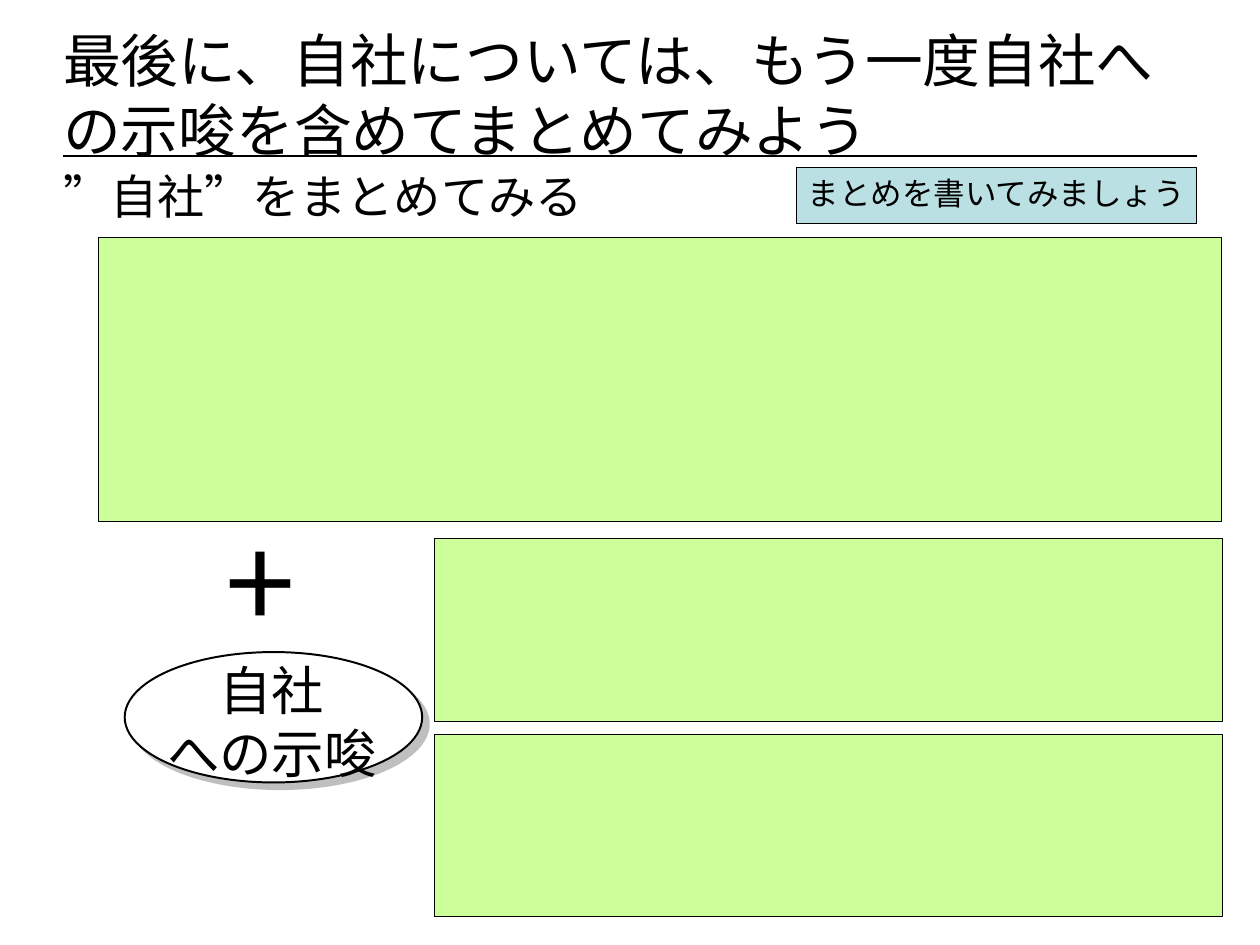
from dataclasses import dataclass
from typing import NamedTuple

from lxml.etree import SubElement
from pptx import Presentation
from pptx.dml.color import RGBColor as Rgb
from pptx.enum.shapes import MSO_CONNECTOR as Link, MSO_SHAPE as Kind
from pptx.enum.text import MSO_ANCHOR as Anchor, PP_ALIGN as Align
from pptx.oxml.ns import qn
from pptx.slide import Slide
from pptx.text.text import TextFrame
from pptx.util import Inches, Pt


@dataclass(frozen=True)
class Theme:
    font: str = "Noto Sans CJK JP"
    ink: str = "000000"
    paper: str = "FFFFFF"
    field: str = "CCFF99"
    tag: str = "BBE0E3"
    shade: str = "BFBFBF"
    title: int = 44
    oval: int = 40
    head: int = 36
    note: int = 24
    plus: int = 96
    lead: float = 1.21
    drop: float = 0.06


class Box(NamedTuple):
    """Left, top, width and height in percent of the slide."""
    x: float
    y: float
    w: float
    h: float


class Panel(NamedTuple):
    box: Box
    kind: Kind
    fill: str
    line: str
    width: float


class Label(NamedTuple):
    box: Box
    text: str
    size: int
    align: Align = Align.LEFT
    pad: float = 0


THEME = Theme()
WIDTH, HEIGHT = Inches(13.34), Inches(10)
LEFT, RIGHT = 5.02, 94.98
RULE = 16.5

OVAL = Box(9.9, 69, 23.61, 13.8)
SHADE = OVAL._replace(x=OVAL.x + 0.52, y=OVAL.y + 0.7)
TAG = Box(63.19, 17.7, 31.78, 6)

FIELDS = [Box(7.8, 25.1, 89.13, 30.1)] + [
    Box(34.48, 57 + 20.7 * row, 62.52, 19.3) for row in range(2)]

PANELS = [Panel(box, Kind.RECTANGLE, THEME.field, THEME.ink, 0.5)
          for box in FIELDS] + [
    Panel(SHADE, Kind.OVAL, THEME.shade, THEME.shade, 1.5),
    Panel(OVAL, Kind.OVAL, THEME.paper, THEME.ink, 1.5),
]

LABELS = [
    Label(Box(LEFT, 2.2, 91.15, 7.3),
          "最後に、自社については、もう一度自社への示唆を含めてまとめてみよう",
          THEME.title),
    Label(Box(LEFT, 17.3, 56.97, 6), "”自社”をまとめてみる", THEME.head),
    Label(Box(10.94, 69.2, 21.29, 7.3), "自社\nへの示唆", THEME.oval,
          Align.CENTER),
    Label(Box(17.17, 52, 11.09, 17.2), "+", THEME.plus, pad=0.1),
]
NOTE = Label(TAG, "まとめを書いてみましょう", THEME.note, Align.CENTER, 0.1)


def place(box: Box) -> tuple[int, int, int, int]:
    """Turn shares of the slide into lengths."""
    return (int(WIDTH * box.x / 100), int(HEIGHT * box.y / 100),
            int(WIDTH * box.w / 100), int(HEIGHT * box.h / 100))


def write(frame: TextFrame, label: Label) -> None:
    frame.word_wrap = True
    frame.vertical_anchor = Anchor.TOP
    frame.margin_left = frame.margin_right = Inches(label.pad)
    frame.margin_top = Inches(label.pad / 2) + Pt(label.size * THEME.drop)
    frame.margin_bottom = Inches(label.pad / 2)
    frame.text = label.text
    for para in frame.paragraphs:
        para.alignment = label.align
        para.line_spacing = Pt(label.size * THEME.lead)
        for run in para.runs:
            run.font.size = Pt(label.size)
            run.font.name = THEME.font
            run.font.color.rgb = Rgb.from_string(THEME.ink)
            east = SubElement(run.font._element, qn("a:ea"))
            east.set("typeface", THEME.font)


def add_label(slide: Slide, label: Label) -> None:
    write(slide.shapes.add_textbox(*place(label.box)).text_frame, label)


def add_panel(slide: Slide, panel: Panel) -> TextFrame:
    shape = slide.shapes.add_shape(panel.kind, *place(panel.box))
    shape.shadow.inherit = False
    shape.fill.solid()
    shape.fill.fore_color.rgb = Rgb.from_string(panel.fill)
    shape.line.color.rgb = Rgb.from_string(panel.line)
    shape.line.width = Pt(panel.width)
    return shape.text_frame


def add_rule(slide: Slide) -> None:
    x, y, w, _ = place(Box(LEFT, RULE, RIGHT - LEFT, 0))
    rule = slide.shapes.add_connector(Link.STRAIGHT, x, y, x + w, y)
    rule.line.color.rgb = Rgb.from_string(THEME.ink)
    rule.line.width = Pt(1)
    SubElement(rule._element.spPr, qn("a:effectLst"))


def main() -> None:
    deck = Presentation()
    deck.slide_width, deck.slide_height = WIDTH, HEIGHT
    slide = deck.slides.add_slide(deck.slide_layouts[6])
    add_rule(slide)
    for panel in PANELS:
        add_panel(slide, panel)
    for label in LABELS:
        add_label(slide, label)
    tag = Panel(TAG, Kind.RECTANGLE, THEME.tag, THEME.ink, 0.75)
    write(add_panel(slide, tag), NOTE)
    deck.save("out.pptx")


if __name__ == "__main__":
    main()
